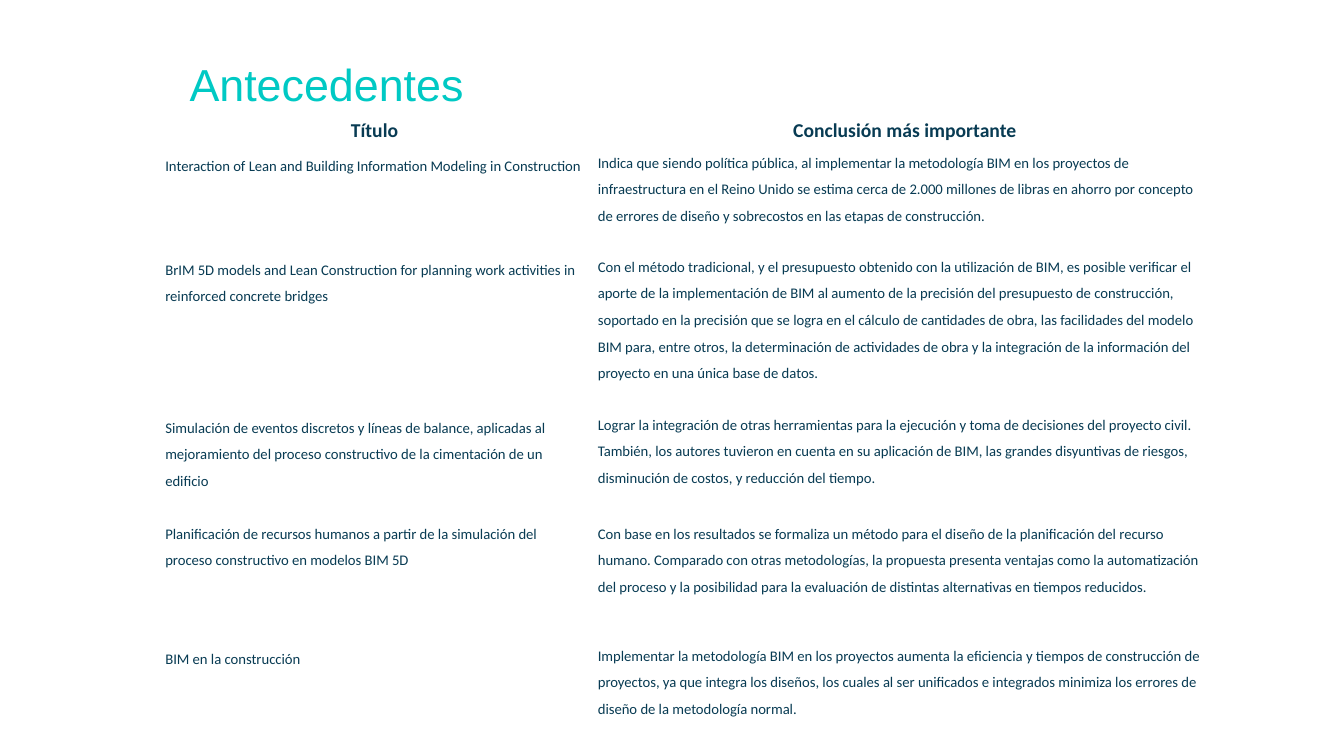
from pptx import Presentation
from pptx.dml.color import RGBColor
from pptx.enum.text import MSO_ANCHOR, MSO_AUTO_SIZE, PP_ALIGN
from pptx.util import Inches, Pt

TOP, NO_FIT = MSO_ANCHOR.TOP, MSO_AUTO_SIZE.NONE
LEFT, CENTER = PP_ALIGN.LEFT, PP_ALIGN.CENTER

# Content
TITLE = "Antecedentes"
HEADS = ("Título", "Conclusión más importante")
WORKS = [
    ("Interaction of Lean and Building Information Modeling in Construction",
     "Indica que siendo política pública, al implementar la metodología BIM en los "
     "proyectos de infraestructura en el Reino Unido se estima cerca de 2.000 millones "
     "de libras en ahorro por concepto de errores de diseño y sobrecostos en las etapas "
     "de construcción."),
    ("BrIM 5D models and Lean Construction for planning work activities in reinforced "
     "concrete bridges",
     "Con el método tradicional, y el presupuesto obtenido con la utilización de BIM, es "
     "posible verificar el aporte de la implementación de BIM al aumento de la precisión "
     "del presupuesto de construcción, soportado en la precisión que se logra en el "
     "cálculo de cantidades de obra, las facilidades del modelo BIM para, entre otros, la "
     "determinación de actividades de obra y la integración de la información del "
     "proyecto en una única base de datos."),
    ("Simulación de eventos discretos y líneas de balance, aplicadas al mejoramiento del "
     "proceso constructivo de la cimentación de un edificio",
     "Lograr la integración de otras herramientas para la ejecución y toma de decisiones "
     "del proyecto civil. También, los autores tuvieron en cuenta en su aplicación de "
     "BIM, las grandes disyuntivas de riesgos, disminución de costos, y reducción del "
     "tiempo."),
    ("Planificación de recursos humanos a partir de la simulación del proceso "
     "constructivo en modelos BIM 5D",
     "Con base en los resultados se formaliza un método para el diseño de la "
     "planificación del recurso humano. Comparado con otras metodologías, la propuesta "
     "presenta ventajas como la automatización del proceso y la posibilidad para la "
     "evaluación de distintas alternativas en tiempos reducidos."),
    ("BIM en la construcción",
     "Implementar la metodología BIM en los proyectos aumenta la eficiencia y tiempos de "
     "construcción de proyectos, ya que integra los diseños, los cuales al ser unificados "
     "e integrados minimiza los errores de diseño de la metodología normal."),
]

# Look and grid, in inches
COLORS = {"title": "00C9C4", "text": "083B53"}
WIDTH, HEIGHT = 13.33, 7.5
TITLE_BOX = (1.78, 0.51, 4.3, 1.75)
GRID_LEFT, GRID_TOP = 1.57, 1.11
COLS = (4.29, 6.23)
ROWS = (0.33, 1.03, 1.57, 1.05, 1.24, 0.83)
SIDE, PAD = 0.07, 0.03
SPACED_ROW = 4  # the one row whose conclusion is padded like a title


def add_run(para, text, font, size, color, bold=False):
    run = para.add_run()
    run.text = text
    run.font.name, run.font.size, run.font.bold = font, Pt(size), bold
    run.font.color.rgb = RGBColor.from_string(COLORS[color])


def fill_cell(cell, text, head, pad):
    cell.fill.background()
    cell.vertical_anchor = TOP
    cell.margin_left = cell.margin_right = Inches(SIDE)
    cell.margin_top = cell.margin_bottom = Inches(pad)
    para = cell.text_frame.paragraphs[0]
    para.alignment = CENTER if head else LEFT
    para.line_spacing = 1.15 if head else 1.5
    para.space_after = Pt(10 if pad else 0)
    add_run(para, text, "Calibri", 14 if head else 10.5, "text", head)


def main():
    deck = Presentation()
    deck.slide_width, deck.slide_height = Inches(WIDTH), Inches(HEIGHT)
    slide = deck.slides.add_slide(deck.slide_layouts[5])

    # Title
    title = slide.shapes.title
    title.left, title.top, title.width, title.height = map(Inches, TITLE_BOX)
    frame = title.text_frame
    frame.auto_size, frame.vertical_anchor = NO_FIT, TOP
    para = frame.paragraphs[0]
    para.alignment = LEFT
    add_run(para, TITLE, "Arial", 32, "title")

    # Table of works
    table = slide.shapes.add_table(
        len(ROWS), len(COLS), Inches(GRID_LEFT), Inches(GRID_TOP),
        Inches(sum(COLS)), Inches(sum(ROWS))).table
    table.first_row = table.horz_banding = False
    for col, width in zip(table.columns, COLS):
        col.width = Inches(width)
    for row, height in zip(table.rows, ROWS):
        row.height = Inches(height)
    for r, texts in enumerate([HEADS] + WORKS):
        for c, text in enumerate(texts):
            padded = c == 0 or r in (0, SPACED_ROW)
            fill_cell(table.cell(r, c), text, r == 0, PAD if padded else 0)

    deck.save("out.pptx")


if __name__ == "__main__":
    main()
